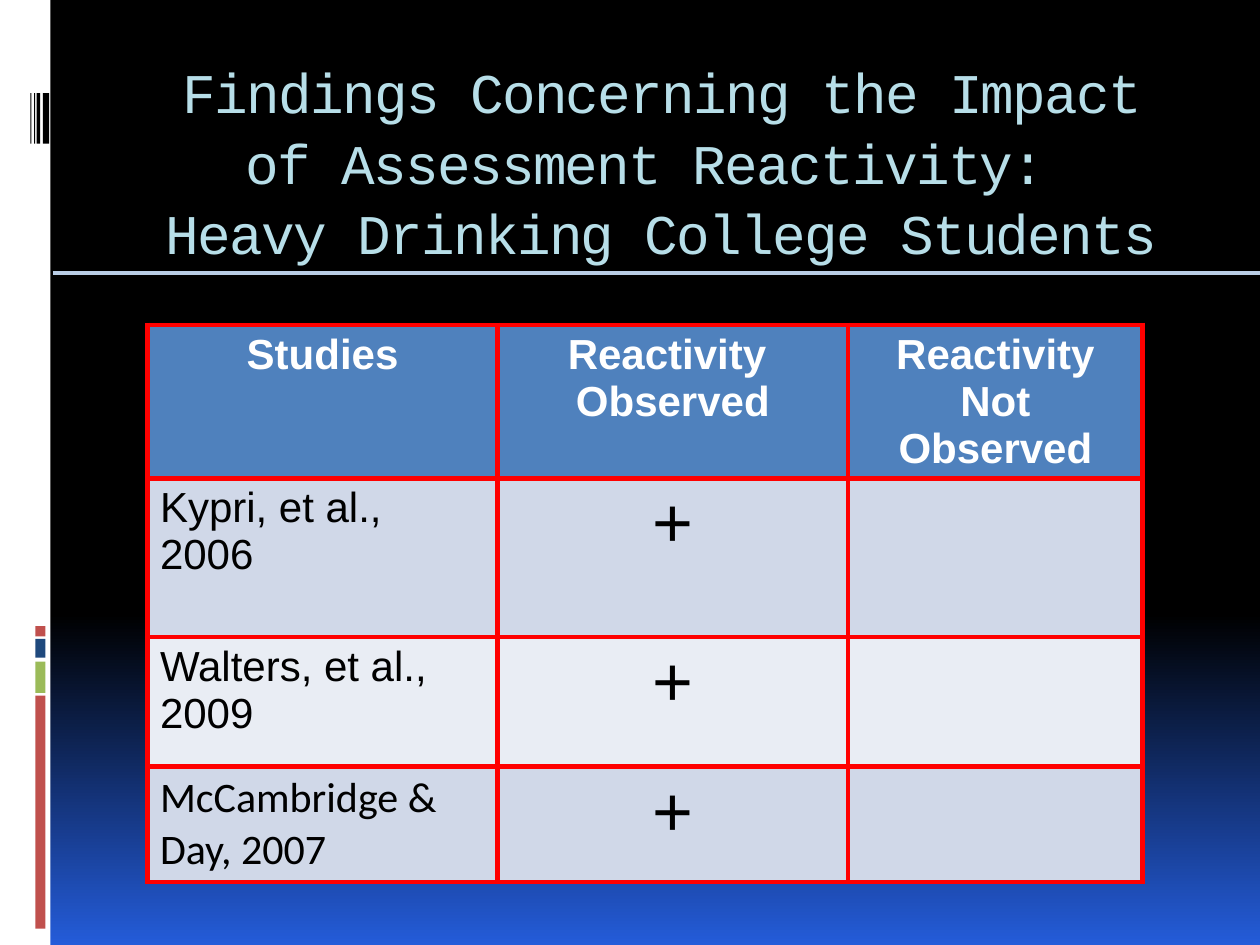
from copy import deepcopy
from dataclasses import dataclass

from lxml import etree
from pptx import Presentation
from pptx.dml.color import RGBColor
from pptx.enum.shapes import MSO_CONNECTOR, MSO_SHAPE
from pptx.enum.text import MSO_ANCHOR, MSO_AUTO_SIZE, PP_ALIGN
from pptx.oxml.ns import qn
from pptx.util import Inches, Pt

RECTANGLE = MSO_SHAPE.RECTANGLE
STRAIGHT = MSO_CONNECTOR.STRAIGHT
TOP = MSO_ANCHOR.TOP
NO_FIT = MSO_AUTO_SIZE.NONE
CENTER, LEFT = PP_ALIGN.CENTER, PP_ALIGN.LEFT

SLIDE_WIDTH, SLIDE_HEIGHT = Inches(10), Inches(7.5)
GRID_COLUMNS, GRID_ROWS = 100, 75

COLORS = {
    "black": "000000",
    "white": "FFFFFF",
    "glow": "245CD9",
    "red": "C0504D",
    "green": "9BBB59",
    "navy": "1F497D",
    "title": "B7DEE8",
    "rule": "B9CDE5",
    "border": "FF0000",
    "header": "4F81BD",
    "odd": "D0D8E8",
    "even": "E9EDF4",
}


@dataclass
class Bar:
    column: float
    row: float
    columns: float
    rows: float
    color: str


@dataclass
class Study:
    citation: str
    rows: float
    font: str = "Arial"


BARS = [
    Bar(0, 0, 4, 75, "white"),
    Bar(2.8, 55.2, 0.8, 18.5, "red"),
    Bar(2.8, 52.5, 0.8, 2.5, "green"),
    Bar(2.8, 50.7, 0.8, 1.5, "navy"),
    Bar(2.8, 49.7, 0.8, 0.8, "red"),
    *(Bar(column, 7.4, columns, 4, "black")
      for column, columns in [(3.4, 0.5), (2.9, 0.3), (2.7, 0.1), (2.4, 0.1)]),
]
HEADINGS = ["Studies", "Reactivity \nObserved", "Reactivity Not\nObserved"]
HEADING_ROWS = 12.1
STUDIES = [
    Study("Kypri, et al., 2006", 12.6),
    Study("Walters, et al., 2009", 10.3),
    Study("McCambridge & Day, 2007", 9.1, "Calibri"),
]
FINDING_COLUMNS = [27.8, 27.8, 23.4]


def across(columns: float) -> int:
    return round(SLIDE_WIDTH * columns / GRID_COLUMNS)


def down(rows: float) -> int:
    return round(SLIDE_HEIGHT * rows / GRID_ROWS)


def rgb(name: str) -> RGBColor:
    return RGBColor.from_string(COLORS[name])


def paint_background(slide) -> None:
    fill = slide.background.fill
    fill.gradient()
    fill.gradient_angle = 270
    stop_list = slide.element.find(".//" + qn("a:gsLst"))
    stop_list.insert(0, deepcopy(stop_list[0]))
    shades = [(0, "black"), (0.65, "black"), (1, "glow")]
    for stop, (position, color) in zip(fill.gradient_stops, shades):
        stop.position = position
        stop.color.rgb = rgb(color)


def draw_bar(slide, bar: Bar) -> None:
    stripe = slide.shapes.add_shape(
        RECTANGLE, across(bar.column), down(bar.row),
        across(bar.columns), down(bar.rows))
    stripe.shadow.inherit = False
    stripe.fill.solid()
    stripe.fill.fore_color.rgb = rgb(bar.color)
    stripe.line.fill.background()


def format_text(frame, size: float, font: str, color: str, align, bold=False) -> None:
    for paragraph in frame.paragraphs:
        paragraph.alignment = align
        for run in paragraph.runs:
            run.font.size = Pt(size)
            run.font.name = font
            run.font.bold = bold
            run.font.color.rgb = rgb(color)


def write_title(slide) -> None:
    title = slide.shapes.title
    title.left, title.top = across(10), down(3.3)
    title.width, title.height = across(85), down(10)
    frame = title.text_frame
    frame.text = ("Findings Concerning the Impact of Assessment Reactivity: \v"
                  "Heavy Drinking College Students")
    frame.word_wrap = True
    frame.auto_size = NO_FIT
    frame.vertical_anchor = TOP
    frame.margin_top = down(1)
    format_text(frame, 32, "Courier New", "title", CENTER)
    frame.paragraphs[0].line_spacing = 1.05
    for run in frame.paragraphs[0].runs:
        run.font._element.set("spc", "-100")


def draw_borders(cell) -> None:
    properties = cell._tc.get_or_add_tcPr()
    for index, side in enumerate(["a:lnL", "a:lnR", "a:lnT", "a:lnB"]):
        border = etree.Element(qn(side), w=str(Pt(3)))
        solid = etree.SubElement(border, qn("a:solidFill"))
        etree.SubElement(solid, qn("a:srgbClr"), val=COLORS["border"])
        properties.insert(index, border)


def fill_cell(cell, text: str, fill: str, size: float, font: str,
              color: str, align, bold=False) -> None:
    cell.fill.solid()
    cell.fill.fore_color.rgb = rgb(fill)
    draw_borders(cell)
    cell.text_frame.text = text
    format_text(cell.text_frame, size, font, color, align, bold)


def draw_findings(slide) -> None:
    heights = [HEADING_ROWS] + [study.rows for study in STUDIES]
    table = slide.shapes.add_table(
        len(heights), len(HEADINGS), across(11.7), down(25.8),
        across(sum(FINDING_COLUMNS)), down(sum(heights))).table
    for column, columns in zip(table.columns, FINDING_COLUMNS):
        column.width = across(columns)
    for row, rows in zip(table.rows, heights):
        row.height = down(rows)
    for index, heading in enumerate(HEADINGS):
        fill_cell(table.cell(0, index), heading, "header", 24, "Arial",
                  "white", CENTER, True)
    for number, study in enumerate(STUDIES, 1):
        band = "odd" if number % 2 else "even"
        fill_cell(table.cell(number, 0), study.citation, band, 24,
                  study.font, "black", LEFT)
        for index, mark in enumerate(["+", ""], 1):
            fill_cell(table.cell(number, index), mark, band, 40, "Arial",
                      "black", CENTER)


def draw_rule(slide) -> None:
    rule = slide.shapes.add_connector(
        STRAIGHT, across(4.2), down(21.7), SLIDE_WIDTH, down(21.7))
    rule.line.color.rgb = rgb("rule")
    rule.line.width = Pt(2.25)
    etree.SubElement(rule._element.spPr, qn("a:effectLst"))


def main() -> None:
    deck = Presentation()
    deck.slide_width, deck.slide_height = SLIDE_WIDTH, SLIDE_HEIGHT
    slide = deck.slides.add_slide(deck.slide_layouts.get_by_name("Title Only"))
    paint_background(slide)
    for bar in BARS:
        draw_bar(slide, bar)
    write_title(slide)
    draw_findings(slide)
    draw_rule(slide)
    deck.save("out.pptx")


if __name__ == "__main__":
    main()
